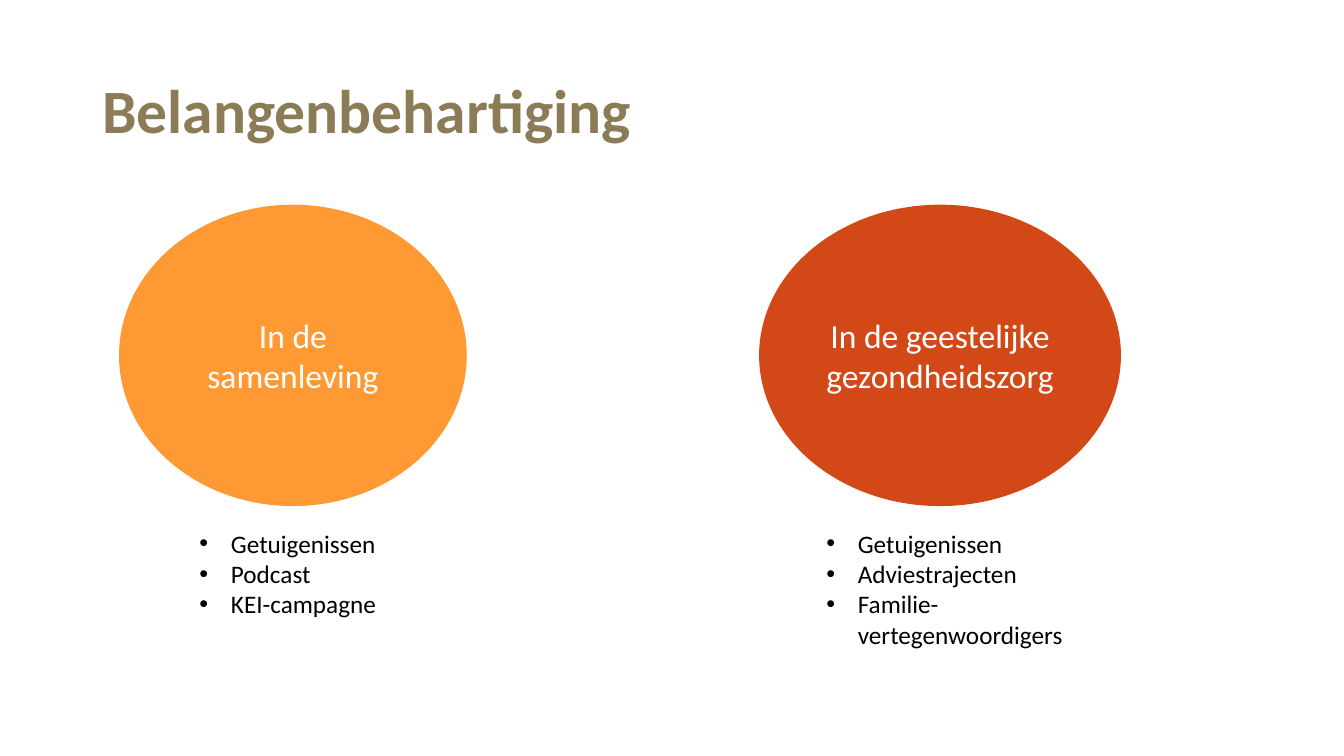
from lxml import etree
from pptx import Presentation
from pptx.dml.color import RGBColor
from pptx.enum.shapes import MSO_SHAPE
from pptx.enum.text import MSO_ANCHOR, PP_ALIGN
from pptx.oxml.ns import qn
from pptx.util import Pt

OVAL = MSO_SHAPE.OVAL
MIDDLE = MSO_ANCHOR.MIDDLE
CENTER = PP_ALIGN.CENTER

FONT = "Calibri"
OLIVE = RGBColor(0x8B, 0x7B, 0x57)
ORANGE = RGBColor(0xFF, 0x99, 0x33)
RUST = RGBColor(0xD3, 0x48, 0x17)
WHITE = RGBColor(0xFF, 0xFF, 0xFF)
BLACK = RGBColor(0, 0, 0)

BULLET_INDENT = Pt(22.5)
CIRCLE_HEIGHT = 215.3
LIST_GAP = 12.2

# Circle box (left, top, width), colour, label, list inset, list width, items
TOPICS = [
    ((85, 146.2, 248.4), ORANGE, "In de samenleving", 50.4, 160.6,
     ["Getuigenissen", "Podcast", "KEI-campagne"]),
    ((542.2, 146.2, 258.5), RUST, "In de geestelijke gezondheidszorg", 41, 197.3,
     ["Getuigenissen", "Adviestrajecten", "Familie-vertegenwoordigers"]),
]


def add_span(para, text, size, color, bold=False):
    span = para.add_run()
    span.text = text
    span.font.name = FONT
    span.font.size = Pt(size)
    span.font.bold = bold
    span.font.color.rgb = color


def add_bullet(para):
    properties = para._p.get_or_add_pPr()
    properties.set("marL", str(BULLET_INDENT))
    properties.set("indent", str(-BULLET_INDENT))
    etree.SubElement(properties, qn("a:buFont")).set("typeface", "Arial")
    etree.SubElement(properties, qn("a:buChar")).set("char", "•")


def add_text_box(slide, left, top, width, height):
    box = slide.shapes.add_textbox(Pt(left), Pt(top), Pt(width), Pt(height))
    box.text_frame.word_wrap = True
    return box.text_frame


def add_title(slide, left, top, width, height, text):
    frame = add_text_box(slide, left, top, width, height)
    frame.vertical_anchor = MIDDLE
    para = frame.paragraphs[0]
    para.line_spacing = 0.9
    add_span(para, text, 44, OLIVE, bold=True)


def add_topic(slide, left, top, width, color, label, list_inset, list_width, items):
    # Circle with its label
    circle = slide.shapes.add_shape(OVAL, Pt(left), Pt(top), Pt(width), Pt(CIRCLE_HEIGHT))
    circle.shadow.inherit = False
    circle.fill.solid()
    circle.fill.fore_color.rgb = color
    circle.line.fill.background()
    frame = circle.text_frame
    frame.word_wrap = True
    frame.vertical_anchor = MIDDLE
    para = frame.paragraphs[0]
    para.alignment = CENTER
    add_span(para, label, 24, WHITE)

    # Bulleted list below the circle
    frame = add_text_box(slide, left + list_inset, top + CIRCLE_HEIGHT + LIST_GAP,
                         list_width, 24 * len(items))
    for index, item in enumerate(items):
        para = frame.add_paragraph() if index else frame.paragraphs[0]
        add_bullet(para)
        add_span(para, item, 18, BLACK)


def main():
    deck = Presentation()
    deck.slide_width, deck.slide_height = Pt(960), Pt(540)
    slide = deck.slides.add_slide(deck.slide_layouts[6])
    add_title(slide, 66, 28.8, 828, 104.4, "Belangenbehartiging")
    for box, *content in TOPICS:
        add_topic(slide, *box, *content)
    deck.save("out.pptx")


if __name__ == "__main__":
    main()
